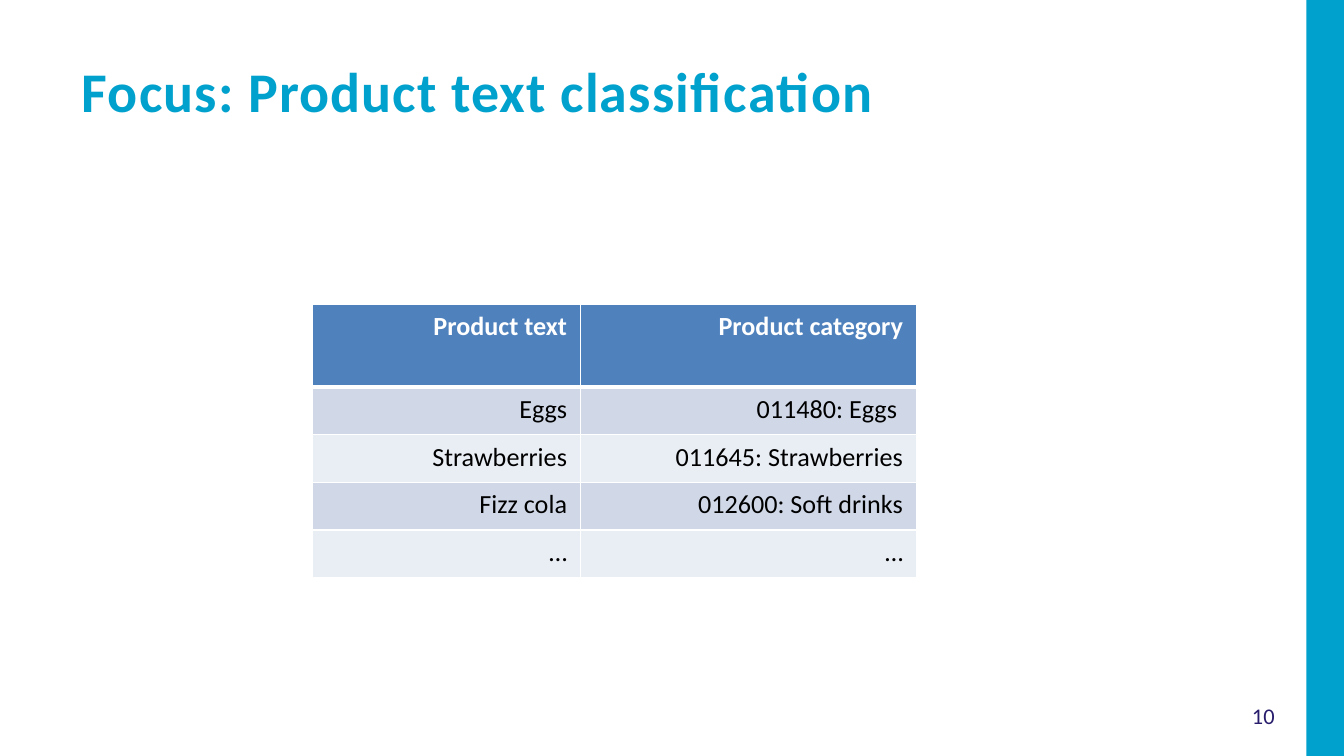
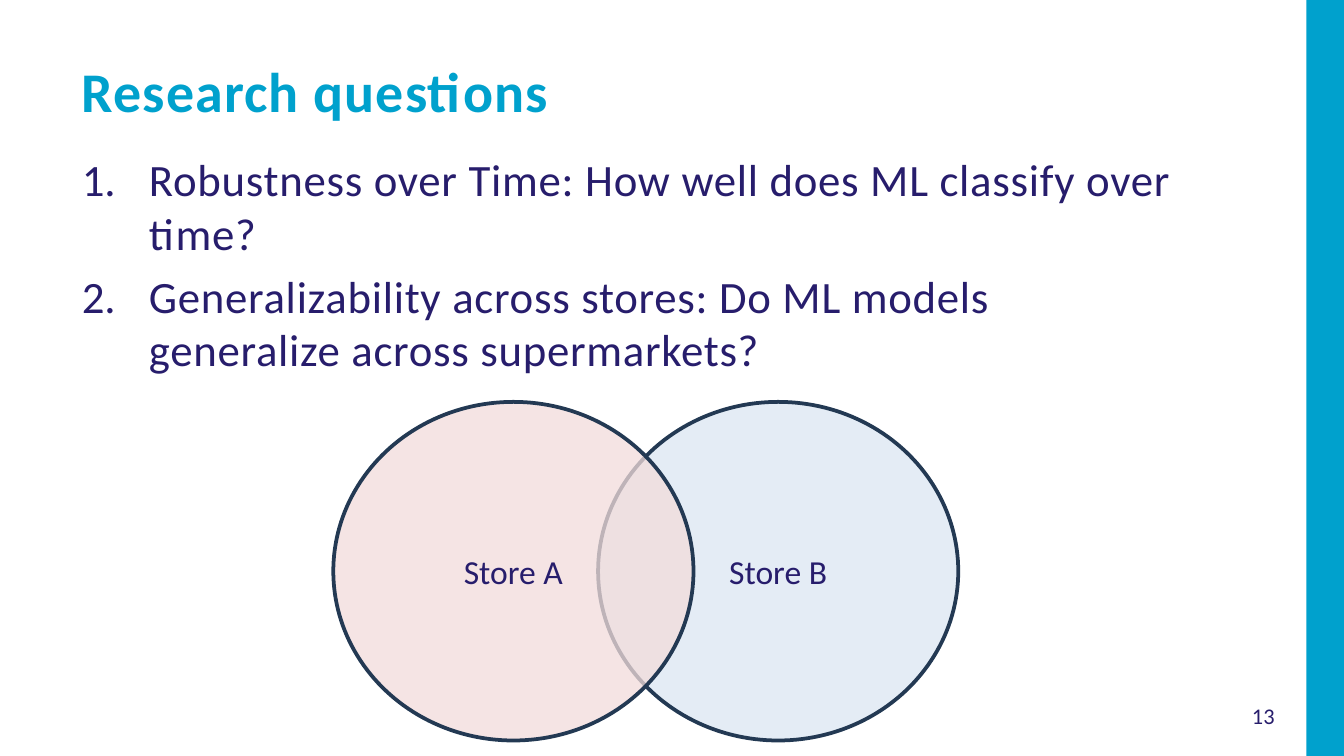
from dataclasses import dataclass

import lxml.etree
import pptx
import pptx.dml.color
import pptx.enum.shapes
import pptx.enum.text
import pptx.oxml.ns
import pptx.presentation
import pptx.shapes.autoshape
import pptx.slide
import pptx.table
import pptx.text.text
import pptx.util

Inches = pptx.util.Inches
Align = pptx.enum.text.PP_ALIGN
Anchor = pptx.enum.text.MSO_ANCHOR
Kind = pptx.enum.shapes.MSO_SHAPE
qn = pptx.oxml.ns.qn


@dataclass(frozen=True)
class Style:
    size: float
    color: str
    bold: bool = False
    track: int = 0


@dataclass(frozen=True)
class Theme:
    font: str = "Calibri"
    cyan: str = "00A1CD"
    white: str = "FFFFFF"
    edge: str = "233953"
    header: str = "4F81BD"
    bands: tuple[str, str] = ("D0D8E8", "E9EDF4")
    title: Style = Style(30, "00A1CD", True, 60)
    body: Style = Style(24, "271D6C", False, 40)
    label: Style = Style(18, "271D6C")
    number: Style = Style(12, "271D6C")
    head: Style = Style(14, "FFFFFF", True)
    cell: Style = Style(14, "000000")


@dataclass(frozen=True)
class Box:
    left: float
    top: float
    width: float
    height: float

    def place(self) -> tuple[int, int, int, int]:
        return (Inches(self.left), Inches(self.top),
                Inches(self.width), Inches(self.height))


@dataclass(frozen=True)
class Store:
    name: str
    left: float
    fill: str


THEME = Theme()
WIDTH = 10
HEIGHT = WIDTH * 9 / 16
BAND = Box(9.72, 0, 0.28, HEIGHT)
NUMBER = Box(9.08, 5.15, 0.64, 0.35)
TITLE = Box(0.51, 0.37, 8.35, 0.55)
BODY = Box(0.51, 1.08, 8.35, 4.02)
TABLE = Box(2.32, 2.26, 4.5, 2.04)
COLUMNS = (2, 2.5)
ROWS = (
    ("Product text", "Product category"),
    ("Eggs", "011480: Eggs "),
    ("Strawberries", "011645: Strawberries"),
    ("Fizz cola", "012600: Soft drinks"),
    ("…", "…"),
)
HEAD_ROW = 0.62
DATA_ROW = (TABLE.height - HEAD_ROW) / (len(ROWS) - 1)
ASKS = (
    "Robustness over Time: How well does ML classify over time?",
    "Generalizability across stores: Do ML models generalize across supermarkets?",
)
STORES = (Store("Store B", 4.45, "DCE6F2"), Store("Store A", 2.48, "F2DCDB"))
STORE_TOP, STORE_WIDTH, STORE_HEIGHT = 2.99, 2.68, 2.52


def rgb(code: str) -> pptx.dml.color.RGBColor:
    return pptx.dml.color.RGBColor.from_string(code)


def write(para: pptx.text.text._Paragraph, text: str, style: Style,
          align: Align = Align.LEFT) -> None:
    para.text = text
    para.alignment = align
    for run in para.runs:
        run.font.name = THEME.font
        run.font.size = pptx.util.Pt(style.size)
        run.font.bold = style.bold
        run.font.color.rgb = rgb(style.color)
        if style.track:
            run._r.get_or_add_rPr().set("spc", str(style.track))


def add_shape(slide: pptx.slide.Slide, kind: Kind, box: Box,
              fill: str) -> pptx.shapes.autoshape.Shape:
    shape = slide.shapes.add_shape(kind, *box.place())
    shape.shadow.inherit = False
    shape.fill.solid()
    shape.fill.fore_color.rgb = rgb(fill)
    shape.line.fill.background()
    return shape


def add_text(slide: pptx.slide.Slide, box: Box) -> pptx.text.text.TextFrame:
    frame = slide.shapes.add_textbox(*box.place()).text_frame
    frame.word_wrap = True
    return frame


def add_slide(deck: pptx.presentation.Presentation, title: str,
              number: int) -> pptx.slide.Slide:
    slide = deck.slides.add_slide(deck.slide_layouts[5])
    add_shape(slide, Kind.RECTANGLE, BAND, THEME.cyan)
    frame = add_text(slide, NUMBER)
    frame.vertical_anchor = Anchor.MIDDLE
    write(frame.paragraphs[0], str(number), THEME.number, Align.CENTER)
    head = slide.shapes.title
    head.left, head.top, head.width, head.height = TITLE.place()
    head.text_frame.vertical_anchor = Anchor.TOP
    head.text_frame.auto_size = pptx.enum.text.MSO_AUTO_SIZE.NONE
    write(head.text_frame.paragraphs[0], title, THEME.title)
    return slide


def add_border(cell: pptx.table._Cell, side: str, width: float) -> None:
    line = lxml.etree.SubElement(cell._tc.get_or_add_tcPr(), qn(f"a:ln{side}"),
                                 w=str(pptx.util.Pt(width)))
    fill = lxml.etree.SubElement(line, qn("a:solidFill"))
    lxml.etree.SubElement(fill, qn("a:srgbClr"), val=THEME.white)


def add_table(slide: pptx.slide.Slide) -> None:
    table = slide.shapes.add_table(len(ROWS), len(COLUMNS), *TABLE.place()).table
    for column, width in zip(table.columns, COLUMNS):
        column.width = Inches(width)
    for r, texts in enumerate(ROWS):
        table.rows[r].height = Inches(DATA_ROW if r else HEAD_ROW)
        fill = THEME.bands[(r - 1) % 2] if r else THEME.header
        for c, text in enumerate(texts):
            cell = table.cell(r, c)
            for side in "LRTB":
                thick = (r, side) in ((0, "B"), (1, "T"))
                add_border(cell, side, 3 if thick else 1)
            cell.fill.solid()
            cell.fill.fore_color.rgb = rgb(fill)
            write(cell.text_frame.paragraphs[0], text,
                  THEME.cell if r else THEME.head, Align.RIGHT)


def add_list(slide: pptx.slide.Slide) -> None:
    frame = add_text(slide, BODY)
    for i, text in enumerate(ASKS):
        para = frame.add_paragraph() if i else frame.paragraphs[0]
        props = para._p.get_or_add_pPr()
        props.set("marL", str(Inches(0.5)))
        props.set("indent", str(Inches(-0.5)))
        lxml.etree.SubElement(props, qn("a:buFont"), typeface="+mj-lt")
        lxml.etree.SubElement(props, qn("a:buAutoNum"), type="arabicPeriod")
        if i:
            para.space_before = pptx.util.Pt(0.2 * THEME.body.size)
        write(para, text, THEME.body)


def add_store(slide: pptx.slide.Slide, store: Store) -> None:
    box = Box(store.left, STORE_TOP, STORE_WIDTH, STORE_HEIGHT)
    shape = add_shape(slide, Kind.OVAL, box, store.fill)
    color = shape._element.spPr.find(qn("a:solidFill")).find(qn("a:srgbClr"))
    lxml.etree.SubElement(color, qn("a:alpha"), val="75000")
    shape.line.color.rgb = rgb(THEME.edge)
    shape.line.width = pptx.util.Pt(2)
    shape.text_frame.vertical_anchor = Anchor.MIDDLE
    write(shape.text_frame.paragraphs[0], store.name, THEME.label, Align.CENTER)


def main() -> None:
    deck = pptx.Presentation()
    deck.slide_width, deck.slide_height = Inches(WIDTH), Inches(HEIGHT)
    add_table(add_slide(deck, "Focus: Product text classification", 10))
    slide = add_slide(deck, "Research questions", 13)
    add_list(slide)
    for store in STORES:
        add_store(slide, store)
    deck.save("out.pptx")


if __name__ == "__main__":
    main()
